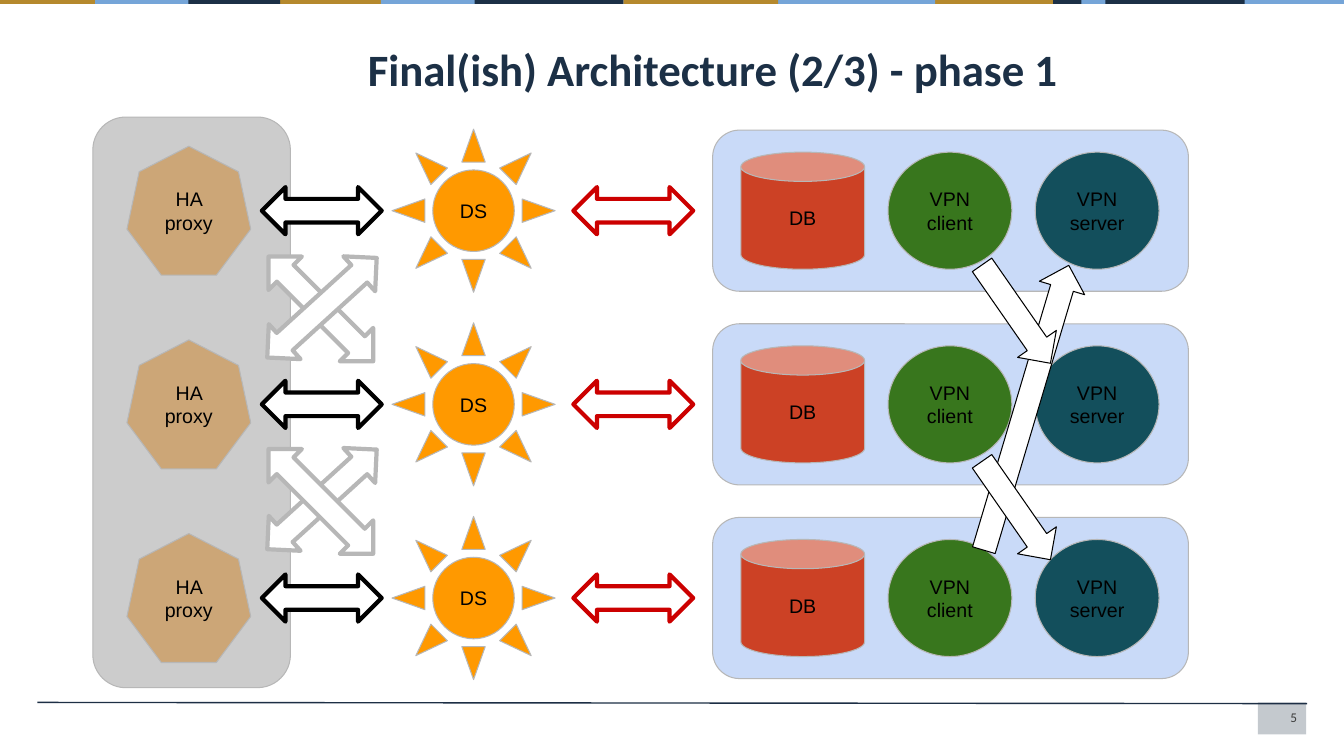
from dataclasses import dataclass

import pptx
import pptx.dml.color
import pptx.enum.shapes
import pptx.enum.text
import pptx.oxml
import pptx.oxml.ns
import pptx.util

Cm = pptx.util.Cm
Pt = pptx.util.Pt
MSO = pptx.enum.shapes.MSO_SHAPE
ALIGN = pptx.enum.text.PP_ALIGN
ANCHOR = pptx.enum.text.MSO_ANCHOR

NAVY, BLUE, GOLD = "1C3046", "75A5D8", "B5892D"
GREY, WHITE, BLACK, RED = "B7B7B7", "FFFFFF", "000000", "CC0000"
RULE = "1D2F45"

ROW_CENTRES = [5.31 + 4.88 * i for i in range(3)]
ARROW_H = 1.19


@dataclass
class Stripe:
    x: float
    w: float
    color: str


@dataclass
class Node:
    kind: MSO
    x: float
    w: float
    h: float
    fill: str
    text: str = ""
    line: str = GREY
    weight: float = 0.75


@dataclass
class Diagonal:
    kind: MSO
    x: float
    y: float
    w: float
    angle: float
    line: str
    weight: float


STRIPES = [
    Stripe(11.53, 4.19, NAVY),
    Stripe(22, 11.73, GOLD),
    Stripe(31.11, 2.76, BLUE),
    Stripe(7.06, 3.76, GOLD),
    Stripe(26.54, 4.83, NAVY),
    Stripe(19.33, 4.24, BLUE),
    Stripe(4.72, 2.34, NAVY),
    Stripe(2.39, 2.36, BLUE),
    Stripe(9.6, 2.36, BLUE),
    Stripe(15.72, 3.89, GOLD),
    Stripe(27.25, 0.61, BLUE),
    Stripe(0, 2.39, GOLD),
]

ROW = [
    Node(MSO.ROUNDED_RECTANGLE, 17.96, 11.99, 4.06, "C9DAF8"),
    Node(MSO.HEPTAGON, 3.2, 3.12, 3.25, "CCA677", "HA proxy"),
    Node(MSO.CAN, 18.67, 3.12, 2.95, "CC4125", "DB"),
    Node(MSO.OVAL, 26.09, 3.12, 2.95, "134F5C", "VPN server"),
    Node(MSO.OVAL, 22.38, 3.12, 2.95, "38761D", "VPN client"),
    Node(MSO.SUN, 9.88, 4.11, 4.11, "FF9900", "DS"),
    Node(MSO.LEFT_RIGHT_ARROW, 6.6, 3.02, ARROW_H, WHITE, line=BLACK, weight=3),
    Node(MSO.LEFT_RIGHT_ARROW, 14.45, 3.02, ARROW_H, WHITE, line=RED, weight=3),
]

DIAGONALS = [
    Diagonal(MSO.RIGHT_ARROW, 22.12, 9.68, 7.49, 286.6, BLACK, 0.75),
    Diagonal(MSO.RIGHT_ARROW, 24.1, 7.32, 3.02, 55.2, BLACK, 0.75),
    Diagonal(MSO.RIGHT_ARROW, 24.1, 12.27, 3.02, 55.2, BLACK, 0.75),
    Diagonal(MSO.LEFT_RIGHT_ARROW, 6.22, 7.19, 3.73, 45, GREY, 3),
    Diagonal(MSO.LEFT_RIGHT_ARROW, 6.25, 7.16, 3.73, 317.7, GREY, 3),
    Diagonal(MSO.LEFT_RIGHT_ARROW, 6.25, 11.99, 3.73, 317.7, GREY, 3),
    Diagonal(MSO.LEFT_RIGHT_ARROW, 6.22, 12.04, 3.73, 45, GREY, 3),
]


def rgb(color: str) -> pptx.dml.color.RGBColor:
    return pptx.dml.color.RGBColor.from_string(color)


def write(sp, text: str, *, size: float, font: str = "Arial", color: str = BLACK,
          bold: bool = False, align=ALIGN.CENTER, anchor=ANCHOR.MIDDLE,
          inset_x: float = 0.25, inset_y: float = 0.25, spacing: float = 1.0) -> None:
    tf = sp.text_frame
    tf.word_wrap = True
    tf.vertical_anchor = anchor
    tf.margin_left = tf.margin_right = Cm(inset_x)
    tf.margin_top = tf.margin_bottom = Cm(inset_y)
    p = tf.paragraphs[0]
    p.alignment = align
    p.line_spacing = spacing
    r = p.add_run()
    r.text = text
    r.font.name = font
    r.font.size = Pt(size)
    r.font.bold = bold
    r.font.color.rgb = rgb(color)


def add_shape(s, kind: MSO, x: float, y: float, w: float, h: float, fill: str,
              line: str = "", weight: float = 0.75):
    sp = s.shapes.add_shape(kind, Cm(x), Cm(y), Cm(w), Cm(h))
    sp.shadow.inherit = False
    sp.fill.solid()
    sp.fill.fore_color.rgb = rgb(fill)
    if line:
        sp.line.color.rgb = rgb(line)
        sp.line.width = Pt(weight)
    else:
        sp.line.fill.background()
    return sp


def add_text(s, x: float, y: float, w: float, h: float, text: str, **style) -> None:
    sp = s.shapes.add_textbox(Cm(x), Cm(y), Cm(w), Cm(h))
    write(sp, text, anchor=ANCHOR.TOP, **style)


def add_frame(s) -> None:
    tab = add_shape(s, MSO.RECTANGLE, 31.7, 17.7, 1.22, 0.81, RULE)
    clr = tab.fill._xPr.find(".//" + pptx.oxml.ns.qn("a:srgbClr"))
    alpha = pptx.oxml.parse_xml(
        f'<a:alpha {pptx.oxml.ns.nsdecls("a")} val="26000"/>')
    clr.append(alpha)
    for stripe in STRIPES:
        add_shape(s, MSO.RECTANGLE, stripe.x, 0, stripe.w, 0.1, stripe.color)
    rule = s.shapes.add_connector(pptx.enum.shapes.MSO_CONNECTOR.STRAIGHT,
                                  Cm(32.94), Cm(17.73), Cm(0.94), Cm(17.7))
    rule.line.color.rgb = rgb(RULE)
    rule.line.width = Pt(1)
    rule._element.spPr.append(
        pptx.oxml.parse_xml(f'<a:effectLst {pptx.oxml.ns.nsdecls("a")}/>'))


def add_row(s, centre: float) -> None:
    for node in ROW:
        sp = add_shape(s, node.kind, node.x, centre - node.h / 2, node.w, node.h,
                       node.fill, node.line, node.weight)
        if node.text:
            write(sp, node.text, size=14)


def main() -> None:
    prs = pptx.Presentation()
    prs.slide_width, prs.slide_height = Cm(33.87), Cm(19.05)
    s = prs.slides.add_slide(prs.slide_layouts[6])
    add_frame(s)
    add_shape(s, MSO.ROUNDED_RECTANGLE, 2.34, 2.95, 4.98, 14.38, "CCCCCC", GREY)
    add_text(s, 8.94, 0.53, 23.98, 2.29, "Final(ish) Architecture (2/3) - phase 1",
             size=32, font="Calibri", color=NAVY, bold=True, align=ALIGN.LEFT,
             inset_x=0.33, inset_y=0.33, spacing=1.15)
    for centre in ROW_CENTRES:
        add_row(s, centre)
    for d in DIAGONALS:
        sp = add_shape(s, d.kind, d.x, d.y, d.w, ARROW_H, WHITE, d.line, d.weight)
        sp.rotation = d.angle
    add_text(s, 24.28, 17.73, 8.66, 0.79, "5", size=9.5, font="Calibri",
             color="3C3C3C", align=ALIGN.RIGHT, inset_y=0.13)
    prs.save("out.pptx")


if __name__ == "__main__":
    main()
